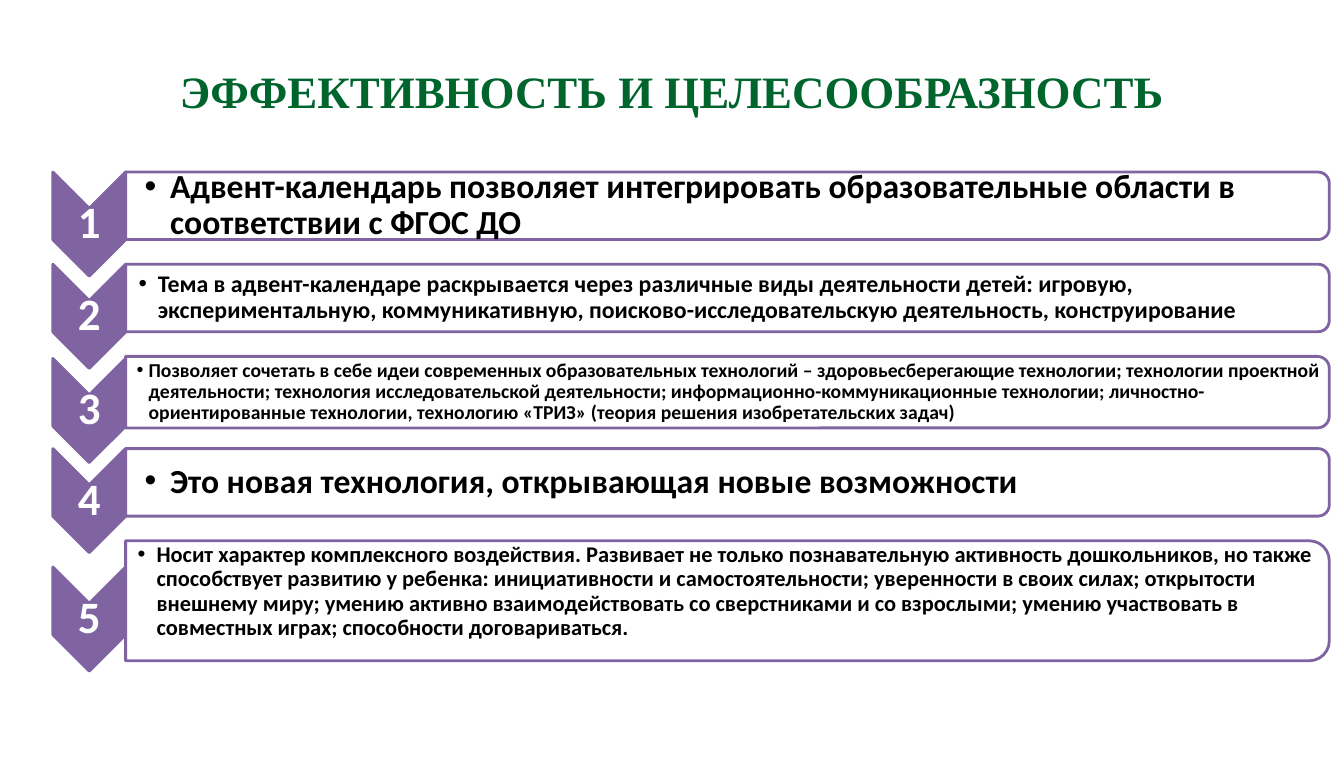
from dataclasses import dataclass

from lxml import etree
from pptx import Presentation
from pptx.dml.color import RGBColor
from pptx.enum.shapes import MSO_SHAPE
from pptx.enum.text import MSO_ANCHOR, PP_ALIGN
from pptx.oxml.ns import qn
from pptx.util import Cm, Pt

CHEVRON = MSO_SHAPE.CHEVRON
BAR = MSO_SHAPE.ROUND_2_SAME_RECTANGLE
MIDDLE, TOP = MSO_ANCHOR.MIDDLE, MSO_ANCHOR.TOP
LEFT, CENTER = PP_ALIGN.LEFT, PP_ALIGN.CENTER

# Content: text, size, bar height, left inset, bullet indent, upward text shift (cm)
TITLE = "ЭФФЕКТИВНОСТЬ И ЦЕЛЕСООБРАЗНОСТЬ"
ROWS = [
    ("Адвент-календарь позволяет интегрировать образовательные области "
     "в соответствии с ФГОС ДО", 24, 1.7, 0.48, 0.64, 0),
    ("Тема в адвент-календаре раскрывается через различные виды деятельности "
     "детей: игровую, экспериментальную, коммуникативную, "
     "поисково-исследовательскую деятельность, конструирование",
     17, 1.7, 0.33, 0.48, 0),
    ("Позволяет сочетать в себе идеи современных образовательных технологий – "
     "здоровьесберегающие технологии; технологии проектной деятельности; "
     "технология исследовательской деятельности; "
     "информационно-коммуникационные технологии; "
     "личностно-ориентированные технологии, технологию «ТРИЗ» "
     "(теория решения изобретательских задач)", 14, 1.8, 0.28, 0.3, 0),
    ("Это новая технология, открывающая новые возможности",
     24, 1.7, 0.48, 0.64, 0),
    ("Носит характер комплексного воздействия. Развивает не только "
     "познавательную активность дошкольников, но также способствует развитию "
     "у ребенка: инициативности и самостоятельности; уверенности в своих "
     "силах; открытости внешнему миру; умению активно взаимодействовать со "
     "сверстниками и со взрослыми; умению участвовать в совместных играх; "
     "способности договариваться.", 16, 3.02, 0.3, 0.48, 0.23),
]


@dataclass(frozen=True)
class Theme:
    green: RGBColor = RGBColor(0x00, 0x64, 0x2D)
    purple: RGBColor = RGBColor(0x80, 0x64, 0xA2)
    white: RGBColor = RGBColor(0xFF, 0xFF, 0xFF)
    black: RGBColor = RGBColor(0x00, 0x00, 0x00)
    title_font: str = "Times New Roman"
    body_font: str = "Calibri"
    heading_size: int = 32
    line_width: int = 2


THEME = Theme()

# Layout in centimetres
SLIDE_WIDTH, SLIDE_HEIGHT = 33.81, 19.05
FIRST_TOP, ROW_PITCH, BASE_HEIGHT = 4.33, 2.32, 1.7
CHEVRON_LEFT, CHEVRON_WIDTH, CHEVRON_HEIGHT = 1.33, 1.83, 2.62
BAR_LEFT, BAR_WIDTH = 3.16, 30.28
TEXT_WIDTH, TEXT_PADDING = 30.2, 0.09


def add_turned_shape(slide, kind, left, top, width, height, fill, opacity=100):
    """Add a shape turned by 90 degrees that covers the given box."""
    shape = slide.shapes.add_shape(
        kind, Cm(left + (width - height) / 2), Cm(top + (height - width) / 2),
        Cm(height), Cm(width))
    shape.rotation = 90
    shape.shadow.inherit = False
    shape.fill.solid()
    shape.fill.fore_color.rgb = fill
    shape.line.color.rgb = THEME.purple
    shape.line.width = Pt(THEME.line_width)
    if opacity < 100:
        color = shape.fill._xPr.find(qn("a:solidFill"))[0]
        etree.SubElement(color, qn("a:alpha"), val=str(opacity * 1000))


def add_text(slide, text, left, top, width, height, *, size, color,
             font=THEME.body_font, align=CENTER, anchor=MIDDLE,
             inset=0.0, margin=0.0, indent=0.0):
    """Add a bold text box; an indent gives the paragraph a bullet."""
    frame = slide.shapes.add_textbox(
        Cm(left), Cm(top), Cm(width), Cm(height)).text_frame
    frame.word_wrap = True
    frame.vertical_anchor = anchor
    frame.margin_left = Cm(inset)
    frame.margin_right = frame.margin_top = frame.margin_bottom = Cm(margin)
    paragraph = frame.paragraphs[0]
    paragraph.alignment = align
    paragraph.line_spacing = 0.9
    if indent:
        properties = paragraph._p.get_or_add_pPr()
        properties.set("marL", str(Cm(indent)))
        properties.set("indent", str(-Cm(indent)))
        etree.SubElement(properties, qn("a:buFont"), typeface="Arial")
        etree.SubElement(properties, qn("a:buChar"), char="•")
    run = paragraph.add_run()
    run.text = text
    run.font.name = font
    run.font.size = Pt(size)
    run.font.bold = True
    run.font.color.rgb = color


def add_row(slide, index, text, size, height, inset, indent, shift):
    top = FIRST_TOP + index * ROW_PITCH
    chevron_top = top + (height - BASE_HEIGHT) / 2
    chevron_box = (CHEVRON_LEFT, chevron_top, CHEVRON_WIDTH, CHEVRON_HEIGHT)

    # Numbered chevron
    add_turned_shape(slide, CHEVRON, *chevron_box, THEME.purple)
    add_text(slide, str(index + 1), *chevron_box,
             size=THEME.heading_size, color=THEME.white)

    # Bar with its statement
    add_turned_shape(slide, BAR, BAR_LEFT, top, BAR_WIDTH, height,
                     THEME.white, opacity=90)
    add_text(slide, text, BAR_LEFT, top + TEXT_PADDING - shift,
             TEXT_WIDTH, height - 2 * TEXT_PADDING, size=size,
             color=THEME.black, align=LEFT, inset=inset, margin=0.03,
             indent=indent)


def main():
    presentation = Presentation()
    presentation.slide_width = Cm(SLIDE_WIDTH)
    presentation.slide_height = Cm(SLIDE_HEIGHT)
    slide = presentation.slides.add_slide(presentation.slide_layouts[6])

    add_text(slide, TITLE, 0, 1.75, SLIDE_WIDTH, 1.22, anchor=TOP,
             size=THEME.heading_size, color=THEME.green, font=THEME.title_font)
    for index, row in enumerate(ROWS):
        add_row(slide, index, *row)

    presentation.save("out.pptx")


if __name__ == "__main__":
    main()
